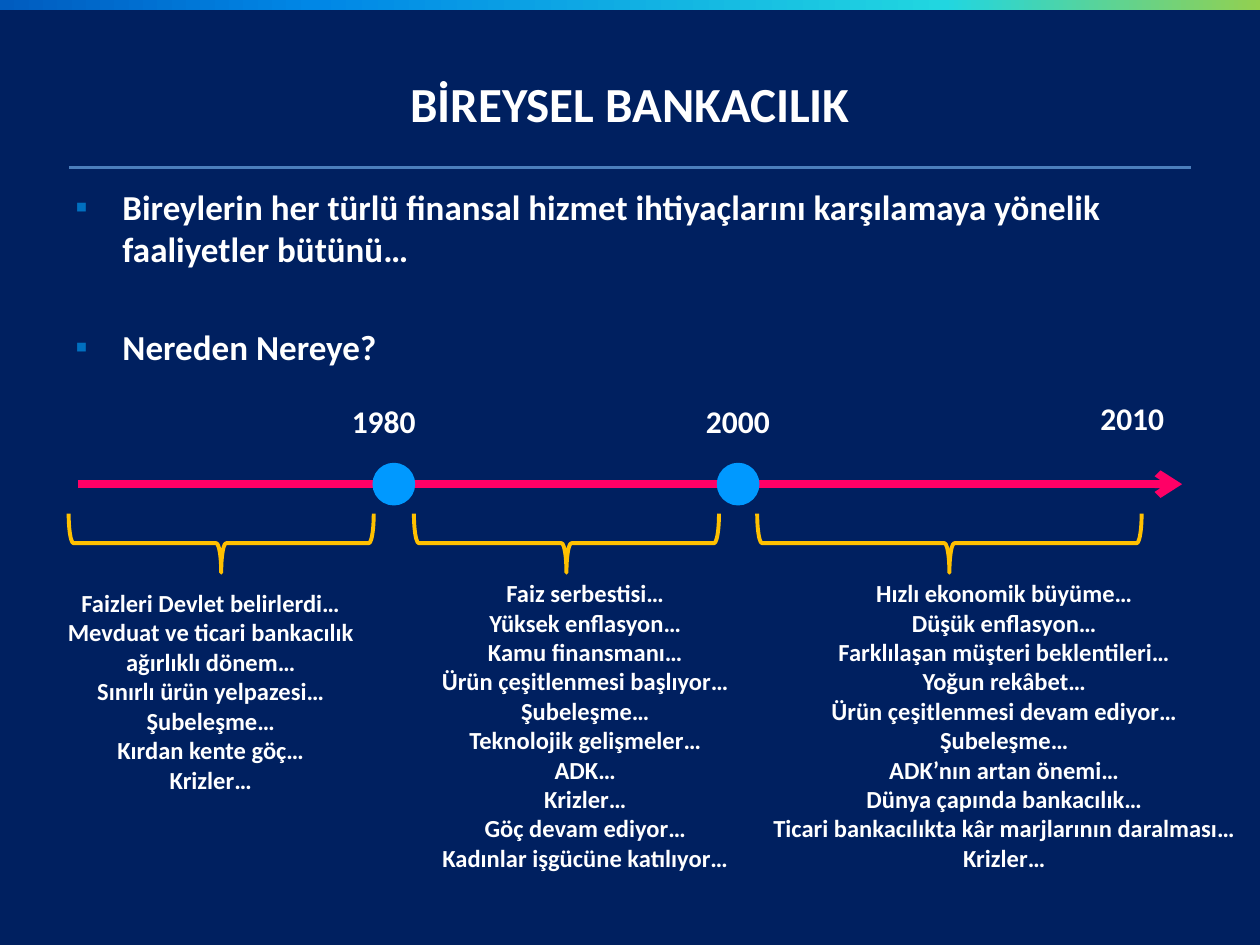
from lxml.etree import SubElement
from pptx import Presentation
from pptx.dml.color import RGBColor
from pptx.enum.shapes import MSO_CONNECTOR, MSO_SHAPE
from pptx.enum.text import MSO_ANCHOR, PP_ALIGN
from pptx.oxml.ns import qn
from pptx.util import Cm, Pt

COLORS = {"navy": "002060", "white": "FFFFFF", "rule": "4B7EBC", "bullet": "0070C0",
          "brace": "FFC000", "axis": "FF0066", "dot": "0099FF"}
BAND_STOPS = [(0, "005CBF"), (25, "0087E6"), (75, "21D6E0"), (100, "92D050")]

TITLE = "BİREYSEL BANKACILIK"
POINTS = [
    "Bireylerin her türlü finansal hizmet ihtiyaçlarını karşılamaya yönelik faaliyetler bütünü…",
    "Nereden Nereye?",
]
# Year, left and top of its label in cm
YEARS = [("1980", 6.35, 7.98), ("2000", 13.49, 7.98), ("2010", 21.44, 7.92)]
DOT_CENTERS = [7.94, 14.88]
# Lengths in cm: brace is (centre, width), box is (left, top, width, height)
PERIODS = [
    {"brace": (4.46, 6.15), "box": (0.58, 11.73, 7.34, 4.45), "lines": [
        "Faizleri Devlet belirlerdi…",
        "Mevduat ve ticari bankacılık ağırlıklı dönem…",
        "Sınırlı ürün yelpazesi…",
        "Şubeleşme…",
        "Kırdan kente göç…",
        "Krizler…"]},
    {"brace": (11.42, 6.15), "box": (8.13, 11.53, 7.34, 6.25), "lines": [
        "Faiz serbestisi…",
        "Yüksek enflasyon…",
        "Kamu finansmanı…",
        "Ürün çeşitlenmesi başlıyor…",
        "Şubeleşme…",
        "Teknolojik gelişmeler…",
        "ADK…",
        "Krizler…",
        "Göç devam ediyor…",
        "Kadınlar işgücüne katılıyor…"]},
    {"brace": (19.14, 7.75), "box": (15.09, 11.53, 10.31, 6.25), "lines": [
        "Hızlı ekonomik büyüme…",
        "Düşük enflasyon…",
        "Farklılaşan müşteri beklentileri…",
        "Yoğun rekâbet…",
        "Ürün çeşitlenmesi devam ediyor…",
        "Şubeleşme…",
        "ADK’nın artan önemi…",
        "Dünya çapında bankacılık…",
        "Ticari bankacılıkta kâr marjlarının daralması…",
        "Krizler…"]},
]
AXIS_Y, DOT_SIZE = 9.76, 0.79
BRACE_Y, BRACE_DEPTH = 10.95, 1.19


def color(name):
    return RGBColor.from_string(COLORS[name])


def add_text(page, lines, left, top, width, height, size=14,
             align=PP_ALIGN.CENTER, anchor=MSO_ANCHOR.TOP, gap=0, bullet=None):
    box = page.shapes.add_textbox(Cm(left), Cm(top), Cm(width), Cm(height))
    frame = box.text_frame
    frame.word_wrap = True
    frame.vertical_anchor = anchor
    for index, line in enumerate(lines):
        para = frame.paragraphs[0] if index == 0 else frame.add_paragraph()
        para.alignment = align
        if index:
            para.space_before = Pt(gap)
        if bullet:
            add_bullet(para, bullet)
        span = para.add_run()
        span.text = line
        span.font.name = "Calibri"
        span.font.size = Pt(size)
        span.font.bold = True
        span.font.color.rgb = color("white")


def add_bullet(para, mark):
    props = para._p.get_or_add_pPr()
    props.set("marL", str(Cm(0.95)))
    props.set("indent", str(Cm(-0.95)))
    tint = SubElement(props, qn("a:buClr"))
    SubElement(tint, qn("a:srgbClr"), val=COLORS["bullet"])
    SubElement(props, qn("a:buFont"), typeface="Arial")
    SubElement(props, qn("a:buChar"), char=mark)


def add_shape(page, kind, left, top, width, height):
    shape = page.shapes.add_shape(kind, Cm(left), Cm(top), Cm(width), Cm(height))
    shape.shadow.inherit = False
    return shape


def add_line(page, left, right, y, tint, weight, arrow=False):
    line = page.shapes.add_connector(MSO_CONNECTOR.STRAIGHT, Cm(left), Cm(y), Cm(right), Cm(y))
    line.line.color.rgb = color(tint)
    line.line.width = Pt(weight)
    if arrow:
        SubElement(line.line._get_or_add_ln(), qn("a:tailEnd"), type="arrow")
    SubElement(line._element.spPr, qn("a:effectLst"))


def add_band(page):
    """Add the gradient strip along the top edge."""
    band = add_shape(page, MSO_SHAPE.RECTANGLE, 0, 0, 25.4, 0.2)
    band.line.fill.background()
    band.fill.gradient()
    band.fill.gradient_angle = 0
    stops = band._element.spPr.find(qn("a:gradFill")).find(qn("a:gsLst"))
    for stop in list(stops):
        stops.remove(stop)
    for percent, tint in BAND_STOPS:
        stop = SubElement(stops, qn("a:gs"), pos=str(percent * 1000))
        SubElement(stop, qn("a:srgbClr"), val=tint)


def add_brace(page, center, width):
    """Add a brace that points down, turned about its centre."""
    brace = add_shape(page, MSO_SHAPE.LEFT_BRACE, center - BRACE_DEPTH / 2,
                      BRACE_Y - width / 2, BRACE_DEPTH, width)
    brace.rotation = 270
    brace.fill.background()
    brace.line.color.rgb = color("brace")
    brace.line.width = Pt(2.25)


def add_dot(page, center):
    dot = add_shape(page, MSO_SHAPE.FLOWCHART_CONNECTOR, center - DOT_SIZE / 2,
                    AXIS_Y - DOT_SIZE / 2, DOT_SIZE, DOT_SIZE)
    dot.fill.solid()
    dot.fill.fore_color.rgb = color("dot")
    dot.line.color.rgb = color("dot")
    dot.line.width = Pt(2)


def main():
    deck = Presentation()
    deck.slide_width, deck.slide_height = Cm(25.4), Cm(19.05)
    page = deck.slides.add_slide(deck.slide_layouts[6])
    page.background.fill.solid()
    page.background.fill.fore_color.rgb = color("navy")

    add_band(page)
    add_text(page, [TITLE], 1.27, 0.76, 22.86, 2.62, size=28, anchor=MSO_ANCHOR.MIDDLE)
    add_line(page, 1.4, 24, 3.38, "rule", 2)
    add_text(page, POINTS, 1.27, 3.61, 22.94, 4, size=20, align=PP_ALIGN.LEFT,
             gap=32, bullet="▪")

    for period in PERIODS:
        add_brace(page, *period["brace"])
        add_text(page, period["lines"], *period["box"])

    add_line(page, 1.57, 23.83, AXIS_Y, "axis", 4.5, arrow=True)
    for center in DOT_CENTERS:
        add_dot(page, center)
    for year, left, top in YEARS:
        add_text(page, [year], left, top, 2.77, 1.02, size=18)

    deck.save("out.pptx")


if __name__ == "__main__":
    main()
